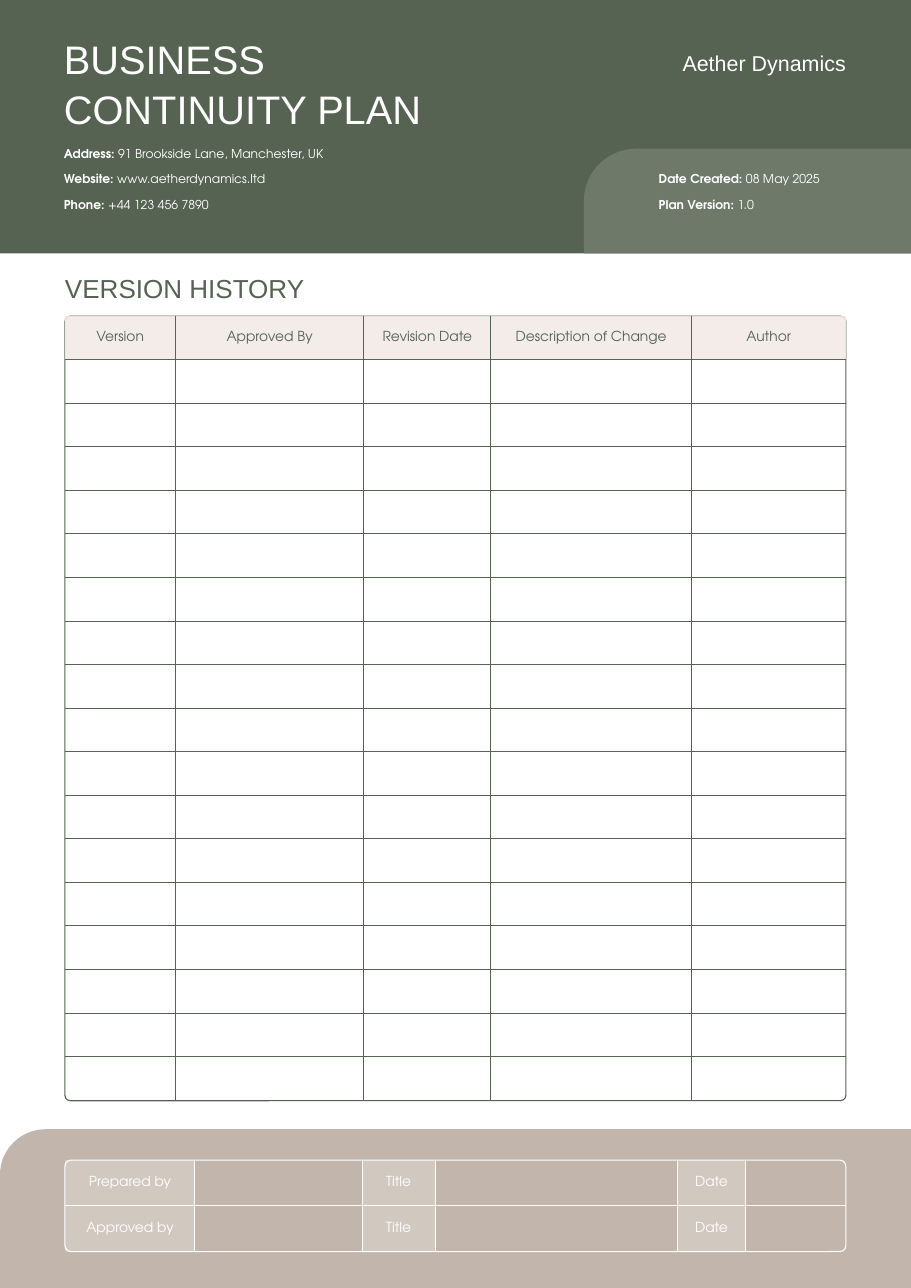
from dataclasses import dataclass

from lxml.etree import SubElement
from pptx import Presentation
from pptx.dml.color import RGBColor
from pptx.enum.shapes import MSO_SHAPE
from pptx.enum.text import MSO_ANCHOR, PP_ALIGN
from pptx.oxml.ns import qn
from pptx.util import Inches, Pt


@dataclass(frozen=True)
class Theme:
    green: str = "566352"
    sage: str = "6E796A"
    taupe: str = "C2B6AC"
    blush: str = "F2EBE7"
    white: str = "FFFFFF"
    head: str = "Arial"
    body: str = "TeX Gyre Adventor"
    title: int = 26
    section: int = 17
    brand: int = 14
    label: int = 9
    detail: int = 8
    line: float = 0.75


T = Theme()
WIDTH, HEIGHT = Inches(8.27), Inches(11.69)
LEFT, SPAN = 7.13, 85.73
TEXT_LEFT = 7.01
DETAIL_TOP, DETAIL_STEP = 11.55, 1.97
HISTORY_TOP, GRID_TOP, GRID_HIGH = 21.3, 24.55, 60.91
SIGN_TOP, SIGN_HIGH = 90.08, 7.1
BODY_ROWS = 17


def place(left, top, width, height):
    """Turn percentages of the slide's size into lengths."""
    return [round(share * side / 100) for share, side in
            zip((left, top, width, height), (WIDTH, HEIGHT) * 2)]


def add_panel(slide, kind, box, fill=None, line=None, adj=None, flip=False):
    shape = slide.shapes.add_shape(kind, *place(*box))
    shape.shadow.inherit = False
    if fill:
        shape.fill.solid()
        shape.fill.fore_color.rgb = RGBColor.from_string(fill)
    else:
        shape.fill.background()
    if line:
        shape.line.color.rgb = RGBColor.from_string(line)
        shape.line.width = Pt(T.line)
    else:
        shape.line.fill.background()
    if adj is not None:
        shape.adjustments[0] = adj
    if flip:
        shape._element.spPr.xfrm.set("flipH", "1")


def write(para, text, color, **format):
    run = para.add_run()
    run.text = text
    run.font.color.rgb = RGBColor.from_string(color)
    for name, value in format.items():
        setattr(run.font, name, value)


def add_text(slide, box, lines, font, size, align=PP_ALIGN.LEFT, spacing=None):
    """Write lines, each a list of (text, bold) runs."""
    frame = slide.shapes.add_textbox(*place(*box)).text_frame
    frame.word_wrap = True
    for side in ("left", "top", "right", "bottom"):
        setattr(frame, f"margin_{side}", 0)
    for index, runs in enumerate(lines):
        para = frame.add_paragraph() if index else frame.paragraphs[0]
        para.alignment = align
        para.line_spacing = spacing
        for text, bold in runs:
            write(para, text, T.white, name=font, size=Pt(size), bold=bold)


def add_details(slide, left, row, width, pairs):
    for index, (name, value) in enumerate(pairs, row):
        box = (left, DETAIL_TOP + index * DETAIL_STEP, width, 1.11)
        add_text(slide, box, [[(name, True), (f" {value}", False)]],
                 T.body, T.detail, spacing=0.83)


def add_border(cell, side, color):
    props = cell._tc.get_or_add_tcPr()
    line = SubElement(props, qn(f"a:ln{side}"), w=str(Pt(T.line)))
    if color:
        paint = SubElement(line, qn("a:solidFill"))
        SubElement(paint, qn("a:srgbClr"), val=color)
    else:
        SubElement(line, qn("a:noFill"))


def fill_cell(cell, color, percent):
    cell.fill.solid()
    cell.fill.fore_color.rgb = RGBColor.from_string(color)
    tint = cell._tc.tcPr.find(f"{qn('a:solidFill')}/{qn('a:srgbClr')}")
    SubElement(tint, qn("a:alpha"), val=str(percent * 1000))


def add_grid(slide, top, cols, rows, color, first=0):
    """Rule the inner lines of a table; rows above first stay unruled."""
    left, top, width, height = place(LEFT, top, SPAN, sum(rows))
    table = slide.shapes.add_table(len(rows), len(cols), left, top,
                                   width, height).table
    table.first_row = table.horz_banding = False
    for column, share in zip(table.columns, cols):
        column.width = round(width * share / sum(cols))
    for row, share in zip(table.rows, rows):
        row.height = round(HEIGHT * share / 100)
    for r in range(len(rows)):
        for c in range(len(cols)):
            cell = table.cell(r, c)
            cell.vertical_anchor = MSO_ANCHOR.MIDDLE
            for side in ("left", "top", "right", "bottom"):
                setattr(cell, f"margin_{side}", 0)
            ruled = {"L": c > 0 and r >= first,
                     "R": c < len(cols) - 1 and r >= first,
                     "T": r > first,
                     "B": first <= r < len(rows) - 1}
            for side, shown in ruled.items():
                add_border(cell, side, color if shown else None)
            cell.fill.background()
    return table


def label(cell, text, color, fill, percent):
    fill_cell(cell, fill, percent)
    para = cell.text_frame.paragraphs[0]
    para.alignment = PP_ALIGN.CENTER
    write(para, text, color, name=T.body, size=Pt(T.label))


def add_history(slide):
    row = GRID_HIGH / (BODY_ROWS + 1)
    rows = [GRID_TOP - HISTORY_TOP] + [row] * (BODY_ROWS + 1)
    table = add_grid(slide, HISTORY_TOP, [1, 1.71, 1.15, 1.82, 1.4],
                     rows, T.green, first=1)
    title = table.cell(0, 0)
    title.merge(table.cell(0, 4))
    title.vertical_anchor = MSO_ANCHOR.TOP
    write(title.text_frame.paragraphs[0], "VERSION HISTORY", T.green,
          name=T.head, size=Pt(T.section))
    heads = ("Version", "Approved By", "Revision Date",
             "Description of Change", "Author")
    for col, text in enumerate(heads):
        label(table.cell(1, col), text, T.green, T.blush, 90)


def add_signoff(slide):
    table = add_grid(slide, SIGN_TOP, [1.18, 1.52, 0.66, 2.2, 0.62, 0.91],
                     [SIGN_HIGH / 2] * 2, T.white)
    for row, role in enumerate(("Prepared by", "Approved by")):
        for index, text in enumerate((role, "Title", "Date")):
            label(table.cell(row, index * 2), text, T.white, T.white, 25)


def main():
    deck = Presentation()
    deck.slide_width, deck.slide_height = WIDTH, HEIGHT
    slide = deck.slides.add_slide(deck.slide_layouts[6])

    frame, corner = MSO_SHAPE.ROUNDED_RECTANGLE, MSO_SHAPE.ROUND_1_RECTANGLE
    add_panel(slide, frame, (LEFT, GRID_TOP, SPAN, GRID_HIGH),
              line=T.green, adj=0.007)
    add_panel(slide, MSO_SHAPE.RECTANGLE, (0, 0, 100, 19.67), T.green)
    add_panel(slide, corner, (64.09, 11.55, 35.91, 8.12), T.sage,
              adj=0.5, flip=True)
    add_panel(slide, corner, (0, 87.68, 100, 12.32), T.taupe,
              adj=0.288, flip=True)
    add_panel(slide, frame, (LEFT, SIGN_TOP, SPAN, SIGN_HIGH),
              line=T.white, adj=0.066)
    add_signoff(slide)
    add_history(slide)

    add_text(slide, (TEXT_LEFT, 2.48, 58.16, 7.53),
             [[("BUSINESS", False)], [("CONTINUITY PLAN", False)]],
             T.head, T.title, spacing=1.05)
    add_details(slide, TEXT_LEFT, 0, 32.28, [
        ("Address:", "91 Brookside Lane, Manchester, UK"),
        ("Website:", "www.aetherdynamics.ltd"),
        ("Phone:", "+44 123 456 7890")])
    add_details(slide, 72.31, 1, 20.56, [
        ("Date Created:", "08 May 2025"), ("Plan Version:", "1.0")])
    add_text(slide, (61.79, 3.85, 31.08, 2.05),
             [[("Aether Dynamics", False)]], T.head, T.brand,
             align=PP_ALIGN.RIGHT)
    deck.save("out.pptx")


if __name__ == "__main__":
    main()
